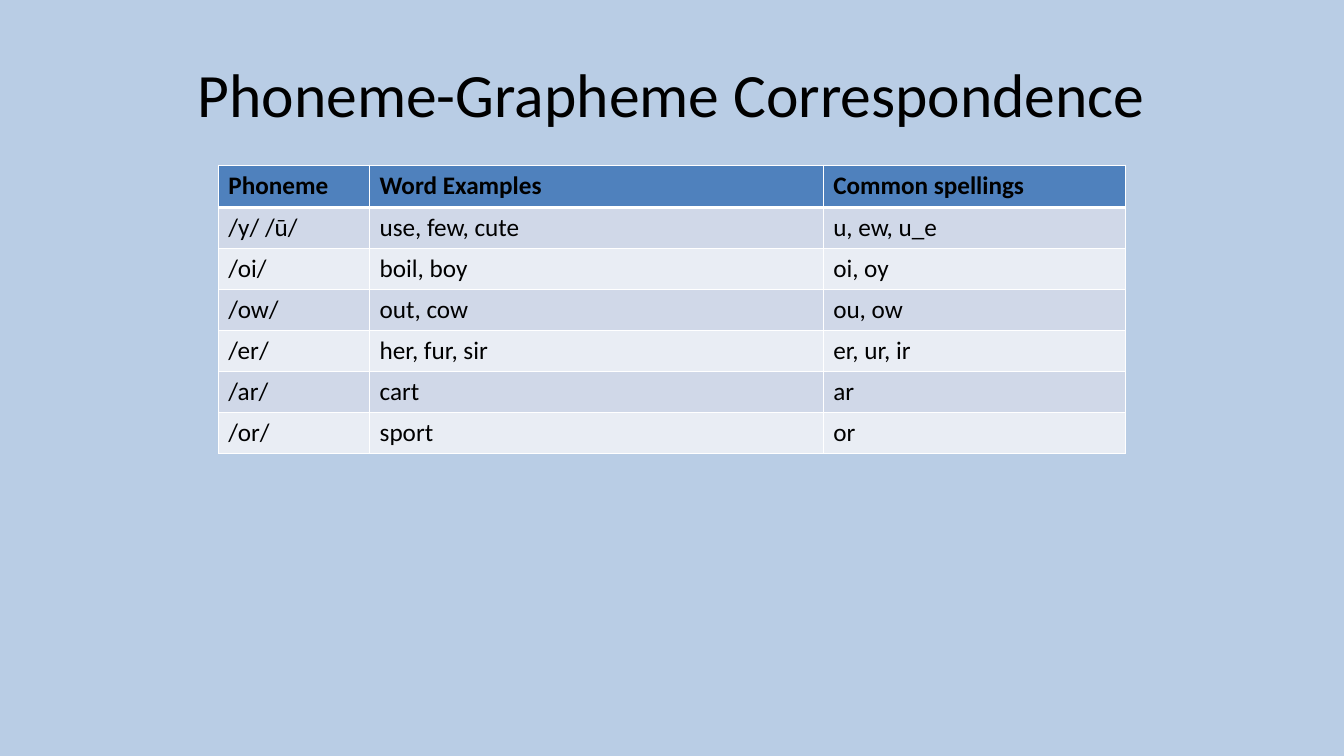
import pptx
import pptx.util
import pptx.dml.color
import pptx.enum.text
import pptx.oxml
import pptx.oxml.ns

Pt = pptx.util.Pt
RGB = pptx.dml.color.RGBColor

SKY = RGB(0xB9, 0xCD, 0xE5)
BLUE = RGB(0x4F, 0x81, 0xBD)
DARK = RGB(0xD0, 0xD8, 0xE8)
LIGHT = RGB(0xE9, 0xED, 0xF4)
WHITE = RGB(0xFF, 0xFF, 0xFF)
BLACK = RGB(0, 0, 0)
FONT = "Calibri"

WIDTHS = (108, 324, 216)
HEAD_H, ROW_H = 30.24, 29.25
ROWS = (
    ("Phoneme", "Word Examples", "Common spellings"),
    ("/y/ /ū/", "use, few, cute", "u, ew, u_e"),
    ("/oi/", "boil, boy", "oi, oy"),
    ("/ow/", "out, cow", "ou, ow"),
    ("/er/", "her, fur, sir", "er, ur, ir"),
    ("/ar/", "cart", "ar"),
    ("/or/", "sport", "or"),
)


def add_run(para, text, size, bold=False):
    run = para.add_run()
    run.text = text
    run.font.name = FONT
    run.font.size = Pt(size)
    run.font.bold = bold
    run.font.color.rgb = BLACK


def add_title(slide, text):
    box = slide.shapes.add_textbox(Pt(48), Pt(21.6), Pt(864), Pt(90))
    frame = box.text_frame
    frame.word_wrap = True
    frame.vertical_anchor = pptx.enum.text.MSO_ANCHOR.MIDDLE
    para = frame.paragraphs[0]
    para.alignment = pptx.enum.text.PP_ALIGN.CENTER
    add_run(para, text, 44)


def add_edge(cell, side, width):
    edge = pptx.oxml.parse_xml(
        f'<a:ln{side} {pptx.oxml.ns.nsdecls("a")} w="{Pt(width)}">'
        f'<a:solidFill><a:srgbClr val="{WHITE}"/></a:solidFill></a:ln{side}>'
    )
    cell._tc.get_or_add_tcPr().append(edge)


def fill_cell(cell, text, row):
    # Edges: the rule under the header is thicker
    wide = {(0, "B"), (1, "T")}
    for side in "LRTB":
        add_edge(cell, side, 3 if (row, side) in wide else 1)
    # Fill: header, then alternating bands
    cell.fill.solid()
    cell.fill.fore_color.rgb = BLUE if row == 0 else (LIGHT, DARK)[row % 2]
    add_run(cell.text_frame.paragraphs[0], text, 18, bold=row == 0)


def add_grid(slide, rows):
    high = HEAD_H + ROW_H * (len(rows) - 1)
    table = slide.shapes.add_table(
        len(rows), len(WIDTHS), Pt(156), Pt(118.08), Pt(sum(WIDTHS)), Pt(high)
    ).table
    for col, width in zip(table.columns, WIDTHS):
        col.width = Pt(width)
    for r, texts in enumerate(rows):
        table.rows[r].height = Pt(ROW_H if r else HEAD_H)
        for c, text in enumerate(texts):
            fill_cell(table.cell(r, c), text, r)


def main():
    deck = pptx.Presentation()
    deck.slide_width, deck.slide_height = Pt(960), Pt(540)
    slide = deck.slides.add_slide(deck.slide_layouts[6])

    # Background
    back = slide.background.fill
    back.solid()
    back.fore_color.rgb = SKY

    # Title and table
    add_title(slide, "Phoneme-Grapheme Correspondence")
    add_grid(slide, ROWS)
    deck.save("out.pptx")


if __name__ == "__main__":
    main()
